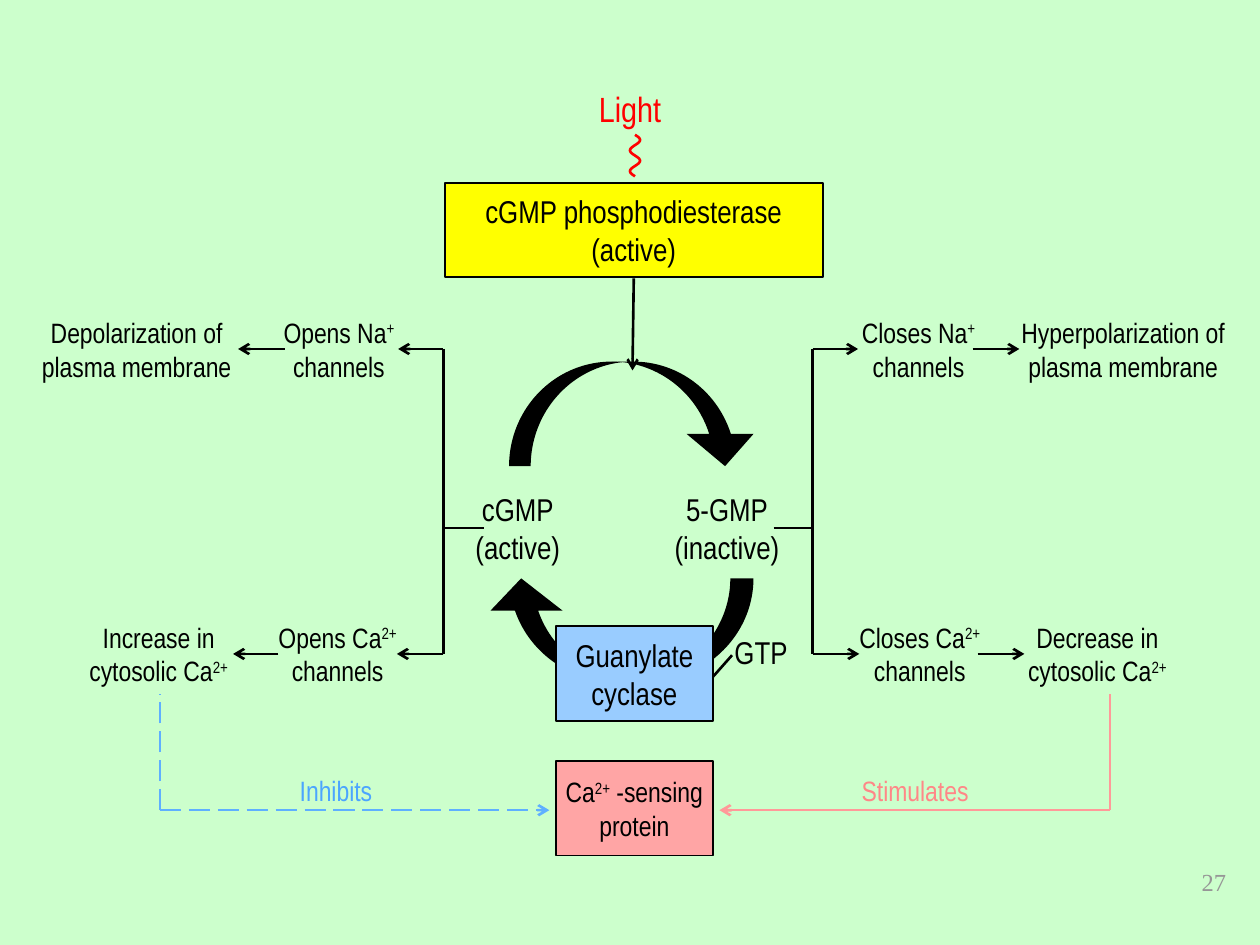
from math import pi, sin
from lxml.etree import SubElement
from pptx import Presentation
from pptx.dml.color import RGBColor
from pptx.enum.dml import MSO_LINE
from pptx.enum.shapes import MSO_CONNECTOR, MSO_SHAPE
from pptx.enum.text import MSO_ANCHOR, PP_ALIGN
from pptx.oxml.ns import qn
from pptx.util import Inches, Pt

HUES = {
    "black": "000000", "red": "FF0000", "yellow": "FFFF00", "blue": "99CCFF",
    "pink": "FFA5A5", "mint": "CCFFCC", "gray": "969696",
    "rose": "FF9999", "coral": "FF8787", "sky": "5FAFFF", "azure": "4BA5FF",
}
FONT = "Arial Narrow"
TOP, MID, LOW, BASE = 2.77, 4.19, 5.19, 6.43
LEFT, RIGHT = 3.52, 6.45

BOXES = [
    ("cGMP phosphodiesterase\n(active)", 3.53, 1.45, 3, "yellow", 18),
    ("Guanylate\ncyclase", 4.41, 4.97, 1.25, "blue", 18),
    ("Ca^2+^ -sensing\nprotein", 4.41, 6.04, 1.25, "pink", 16),
]
CURVES = [
    (4.04, 2.87, 1.98, 0, (0.207, 0.64, 0.308)),
    (3.85, 4.59, 2.13, 180, (0.222, 0.689, 0.308)),
]
LABELS = [
    ("cGMP\n(active)", 3.36, MID, 1.5, 18),
    ("5-GMP\n(inactive)", 5.02, MID, 1.5, 18),
    ("GTP", 5.69, 5.17, 0.7, 18),
    ("Closes Na^+^\nchannels", 6.59, TOP, 1.4, 16),
    ("Hyperpolarization of plasma membrane", 7.95, TOP, 1.93, 16),
    ("Closes Ca^2+^\nchannels", 6.6, LOW, 1.4, 16),
    ("Decrease in cytosolic Ca^2+^", 8.01, LOW, 1.4, 16),
    ("Opens Na^+^\nchannels", 1.99, TOP, 1.4, 16),
    ("Depolarization of plasma membrane", 0.12, TOP, 1.93, 16),
    ("Opens Ca^2+^\nchannels", 1.98, LOW, 1.4, 16),
    ("Increase in cytosolic Ca^2+^", 0.56, LOW, 1.4, 16),
]
NOTES = [
    ("Stimulates", 6.74, 1.05, "coral"),
    ("Inhibits", 2.28, 0.78, "azure"),
]
LINES = [
    (5.66, 5.37, 5.81, 5.2, "black"),
    (6.14, MID, RIGHT, MID, "black"),
    (RIGHT, TOP, RIGHT, LOW, "black"),
    (3.84, MID, LEFT, MID, "black"),
    (LEFT, TOP, LEFT, LOW, "black"),
    (8.81, BASE, 8.81, 5.51, "rose"),
    (1.27, BASE, 1.27, 5.51, "sky"),
]
ARROWS = [
    (5.03, 2.21, 5.02, 2.94, "black"),
    (RIGHT, TOP, 6.81, TOP, "black"),
    (RIGHT, LOW, 6.82, LOW, "black"),
    (7.72, TOP, 8.09, TOP, "black"),
    (7.76, LOW, 8.13, LOW, "black"),
    (LEFT, TOP, 3.16, TOP, "black"),
    (LEFT, LOW, 3.15, LOW, "black"),
    (2.26, TOP, 1.89, TOP, "black"),
    (2.21, LOW, 1.85, LOW, "black"),
    (8.81, BASE, 5.71, BASE, "rose"),
    (1.27, BASE, 4.36, BASE, "sky"),
]


def hue(name):
    return RGBColor.from_string(HUES[name])


def write(frame, text, size, color="black", align=PP_ALIGN.CENTER,
          anchor=MSO_ANCHOR.MIDDLE, wrap=True, font=FONT):
    frame.word_wrap = wrap
    frame.vertical_anchor = anchor
    for row, words in enumerate(text.split("\n")):
        para = frame.add_paragraph() if row else frame.paragraphs[0]
        para.alignment = align
        for turn, part in enumerate(words.split("^")):
            if not part:
                continue
            run = para.add_run()
            run.text = part
            run.font.name = font
            run.font.size = Pt(size)
            run.font.color.rgb = hue(color)
            if turn % 2:
                run.font._element.set("baseline", "30000")


def label(slide, x, y, w, h, *args, **opts):
    box = slide.shapes.add_textbox(Inches(x), Inches(y), Inches(w), Inches(h))
    write(box.text_frame, *args, **opts)


def shape(slide, kind, x, y, w, h, fill):
    item = slide.shapes.add_shape(kind, Inches(x), Inches(y), Inches(w), Inches(h))
    item.shadow.inherit = False
    item.fill.solid()
    item.fill.fore_color.rgb = hue(fill)
    return item


def link(slide, x1, y1, x2, y2, color, tip=False):
    ends = [Inches(v) for v in (x1, y1, x2, y2)]
    item = slide.shapes.add_connector(MSO_CONNECTOR.STRAIGHT, *ends)
    item.line.color.rgb = hue(color)
    item.line.width = Pt(1.5)
    if color == "sky":
        item.line.dash_style = MSO_LINE.LONG_DASH
    props = item._element.spPr
    if tip:
        SubElement(props.find(qn("a:ln")), qn("a:tailEnd"), type="arrow")
    SubElement(props, qn("a:effectLst"))


def wave(slide):
    dots = [(Inches(5.04 + 0.04 * sin(pi * n / 12)), Inches(1.07 + 0.33 * n / 48))
            for n in range(49)]
    pen = slide.shapes.build_freeform(*dots[0])
    pen.add_line_segments(dots[1:], close=False)
    item = pen.convert_to_shape()
    item.shadow.inherit = False
    item.fill.background()
    item.line.color.rgb = hue("red")
    item.line.width = Pt(1.5)


def main():
    deck = Presentation()
    deck.slide_width, deck.slide_height = Inches(10), Inches(7.5)
    slide = deck.slides.add_slide(deck.slide_layouts[5])
    slide.background.fill.solid()
    slide.background.fill.fore_color.rgb = hue("mint")

    title = slide.shapes.title
    title.left, title.top = Inches(3.99), Inches(0.59)
    title.width, title.height = Inches(2.02), Inches(0.54)
    write(title.text_frame, "Light", 20, "red")
    wave(slide)

    for x, y, w, turn, bends in CURVES:
        item = shape(slide, MSO_SHAPE.CURVED_DOWN_ARROW, x, y, w, 0.83, "black")
        item.line.fill.background()
        item.rotation = turn
        for n, bend in enumerate(bends):
            item.adjustments[n] = bend
    for text, x, y, w, fill, size in BOXES:
        item = shape(slide, MSO_SHAPE.RECTANGLE, x, y, w, 0.75, fill)
        item.line.color.rgb = hue("black")
        item.line.width = Pt(1)
        write(item.text_frame, text, size, wrap=False)
    for ends in LINES:
        link(slide, *ends)
    for ends in ARROWS:
        link(slide, *ends, tip=True)
    for text, x, mid, w, size in LABELS:
        label(slide, x, mid - 0.26, w, 0.52, text, size)
    for text, x, w, color in NOTES:
        label(slide, x, 6.09, w, 0.37, text, 16, color, PP_ALIGN.LEFT,
              MSO_ANCHOR.TOP, False)
    label(slide, 7.75, 6.83, 2.08, 0.5, "27", 14, "gray", PP_ALIGN.RIGHT,
          MSO_ANCHOR.TOP, font="Times New Roman")
    deck.save("out.pptx")


if __name__ == "__main__":
    main()
